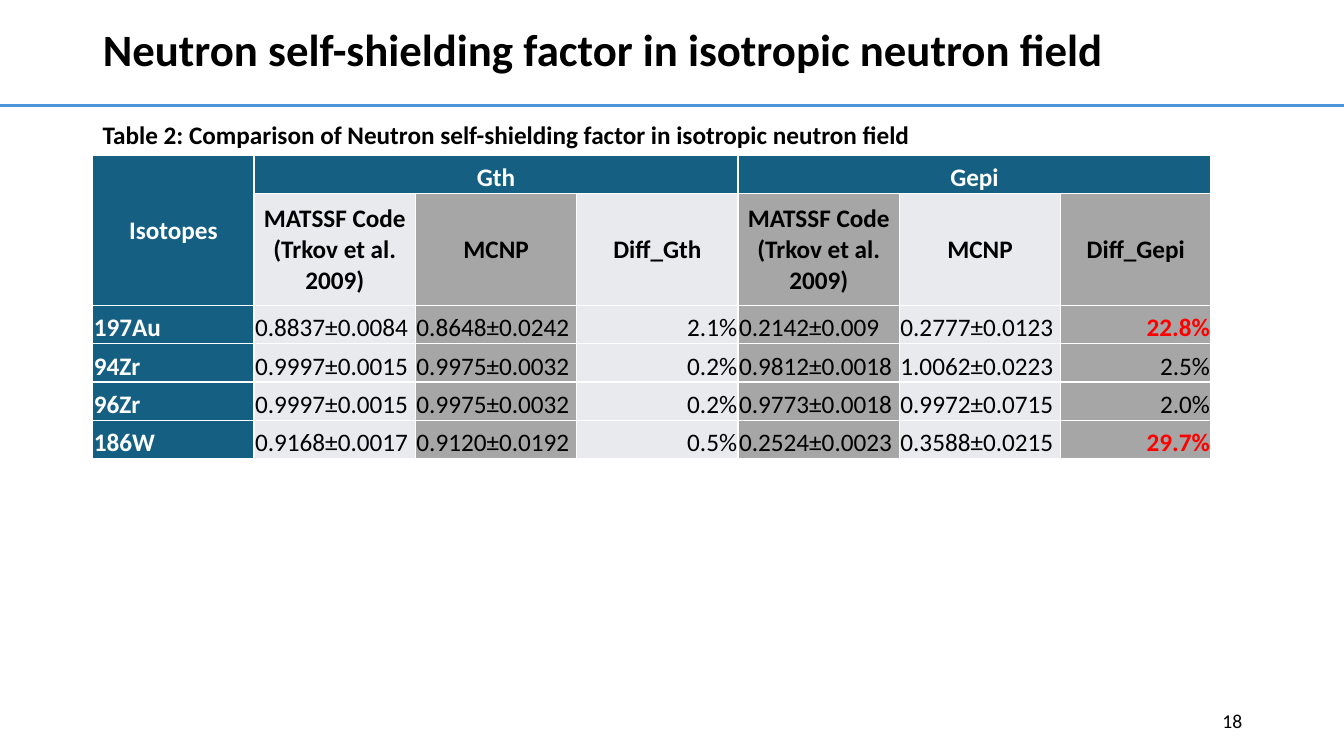
from dataclasses import dataclass

from pptx import Presentation
from pptx.dml.color import RGBColor as Rgb
from pptx.enum.shapes import MSO_CONNECTOR as Connector
from pptx.enum.text import MSO_ANCHOR as Anchor, MSO_AUTO_SIZE as AutoSize, PP_ALIGN as Align
from pptx.oxml.ns import qn
from pptx.util import Emu, Pt
from lxml.etree import SubElement

EMU_PER_PX = 9144
BORDER_SIDES = ("a:lnL", "a:lnR", "a:lnT", "a:lnB")


@dataclass(frozen=True)
class Theme:
    font: str = "Calibri"
    ink: str = "000000"
    paper: str = "FFFFFF"
    rule: str = "4E95D9"
    header: str = "156082"
    light: str = "E8EAED"
    dark: str = "A6A6A6"
    alert: str = "FF0000"
    title_size: int = 32
    body_size: int = 18
    number_size: int = 14
    rule_width: float = 2.25
    border_width: int = 1


def px(value):
    return Emu(value * EMU_PER_PX)


def set_formats(target, formats):
    for name, value in formats.items():
        setattr(target, name, value)


class SlideBuilder:
    def __init__(self, slide, theme):
        self.slide = slide
        self.theme = theme

    def fill_paragraph(self, paragraph, text, size, color, bold=False, **formats):
        paragraph.text = text
        set_formats(paragraph, formats)
        font = paragraph.runs[0].font
        set_formats(font, {"name": self.theme.font, "size": Pt(size), "bold": bold})
        font.color.rgb = Rgb.from_string(color)

    def title(self, text, left, top, width, height):
        shape = self.slide.shapes.title
        set_formats(shape, {
            "left": px(left), "top": px(top), "width": px(width), "height": px(height),
        })
        set_formats(shape.text_frame, {
            "word_wrap": True, "auto_size": AutoSize.NONE, "vertical_anchor": Anchor.MIDDLE,
        })
        self.fill_paragraph(shape.text_frame.paragraphs[0], text, self.theme.title_size,
                            self.theme.ink, bold=True, alignment=Align.LEFT,
                            line_spacing=0.9, space_before=Pt(0))

    def text(self, text, box, size, bold=False, anchor=Anchor.TOP, **formats):
        shape = self.slide.shapes.add_textbox(*map(px, box))
        set_formats(shape.text_frame, {"word_wrap": True, "vertical_anchor": anchor})
        self.fill_paragraph(shape.text_frame.paragraphs[0], text, size, self.theme.ink,
                            bold, **formats)

    def line(self, *ends):
        connector = self.slide.shapes.add_connector(Connector.STRAIGHT, *map(px, ends))
        connector.line.color.rgb = Rgb.from_string(self.theme.rule)
        connector.line.width = Pt(self.theme.rule_width)
        SubElement(connector._element.spPr, qn("a:effectLst"))

    def border(self, cell):
        properties = cell._tc.get_or_add_tcPr()
        for side in BORDER_SIDES:
            line = SubElement(properties, qn(side), w=str(Pt(self.theme.border_width)))
            fill = SubElement(line, qn("a:solidFill"))
            SubElement(fill, qn("a:srgbClr"), val=self.theme.paper)

    def cell(self, cell, text, fill, color, bold, alignment, anchor):
        self.border(cell)
        cell.fill.solid()
        cell.fill.fore_color.rgb = Rgb.from_string(fill)
        set_formats(cell, {
            "margin_left": px(1), "margin_right": px(1), "margin_top": px(1),
            "margin_bottom": px(0), "vertical_anchor": anchor,
        })
        if text:
            self.fill_paragraph(cell.text_frame.paragraphs[0], text, self.theme.body_size,
                                color, bold, alignment=alignment)

    def table(self, rows, left, top, widths, heights, merges, alerts):
        theme = self.theme
        table = self.slide.shapes.add_table(
            len(rows), len(widths), px(left), px(top), px(sum(widths)), px(sum(heights))).table
        set_formats(table, {"first_row": False, "horz_banding": False})
        for column, width in zip(table.columns, widths):
            column.width = px(width)
        for row, height in zip(table.rows, heights):
            row.height = px(height)
        for r, row in enumerate(rows):
            for c, text in enumerate(row):
                is_header = r == 0 or c == 0
                is_alert = text in alerts
                fill = theme.header if is_header else theme.light if c % 2 else theme.dark
                color = theme.paper if is_header else theme.alert if is_alert else theme.ink
                if r < 2:
                    alignment = Align.CENTER
                else:
                    alignment = Align.RIGHT if text.endswith("%") else Align.LEFT
                is_middle = r == 1 or (r, c) == (0, 0)
                self.cell(table.cell(r, c), text, fill, color, is_header or r == 1 or is_alert,
                          alignment, Anchor.MIDDLE if is_middle else Anchor.BOTTOM)
        for first, last in merges:
            table.cell(*first).merge(table.cell(*last))


def main():
    presentation = Presentation()
    set_formats(presentation, {"slide_width": px(1333), "slide_height": px(750)})
    theme = Theme()
    builder = SlideBuilder(presentation.slides.add_slide(presentation.slide_layouts[5]), theme)

    builder.line(0, 105, 1333, 105)
    builder.text("18", (942, 695, 300, 40), theme.number_size, anchor=Anchor.MIDDLE,
                 alignment=Align.RIGHT, space_after=Pt(6))
    builder.title("Neutron self-shielding factor in isotropic neutron field", 92, 6, 1150, 91)
    builder.text("Table 2: Comparison of Neutron self-shielding factor in isotropic neutron field",
                 (92, 113, 1076, 40), theme.body_size, bold=True)

    matssf = "MATSSF Code (Trkov et al. 2009)"
    rows = [
        ("Isotopes", "Gth", "", "", "Gepi", "", ""),
        ("", matssf, "MCNP", "Diff_Gth", matssf, "MCNP", "Diff_Gepi"),
        ("197Au", "0.8837±0.0084", "0.8648±0.0242", "2.1%",
         "0.2142±0.009", "0.2777±0.0123", "22.8%"),
        ("94Zr", "0.9997±0.0015", "0.9975±0.0032", "0.2%",
         "0.9812±0.0018", "1.0062±0.0223", "2.5%"),
        ("96Zr", "0.9997±0.0015", "0.9975±0.0032", "0.2%",
         "0.9773±0.0018", "0.9972±0.0715", "2.0%"),
        ("186W", "0.9168±0.0017", "0.9120±0.0192", "0.5%",
         "0.2524±0.0023", "0.3588±0.0215", "29.7%"),
    ]
    builder.table(rows, 92, 154, widths=[160] * 6 + [149], heights=[38, 111] + [38] * 4,
                  merges=[((0, 0), (1, 0)), ((0, 1), (0, 3)), ((0, 4), (0, 6))],
                  alerts={"22.8%", "29.7%"})
    presentation.save("out.pptx")


if __name__ == "__main__":
    main()
